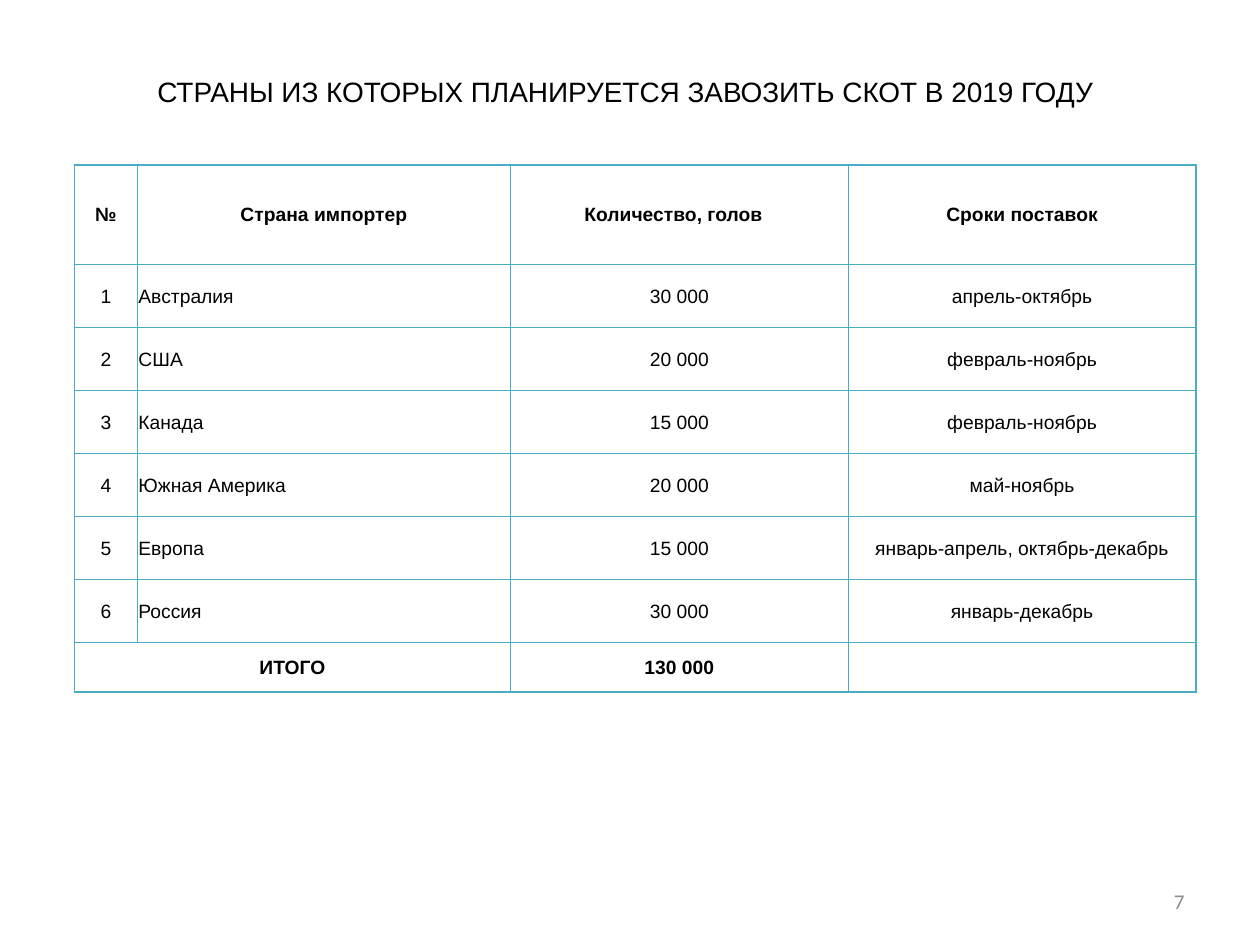
from lxml.etree import SubElement
from pptx import Presentation
from pptx.dml.color import RGBColor
from pptx.enum.text import MSO_ANCHOR as Anchor, PP_ALIGN as Align
from pptx.oxml.ns import qn
from pptx.util import Cm, Pt

BLACK = RGBColor(0x00, 0x00, 0x00)
WHITE = RGBColor(0xFF, 0xFF, 0xFF)
GREY = RGBColor(0x8C, 0x8C, 0x8C)
TEAL = RGBColor(0x4B, 0xAC, 0xC6)

HEADINGS = ["№", "Страна импортер", "Количество, голов", "Сроки поставок"]
SUPPLIES = [
    ("Австралия", "30 000", "апрель-октябрь"),
    ("США", "20 000", "февраль-ноябрь"),
    ("Канада", "15 000", "февраль-ноябрь"),
    ("Южная Америка", "20 000", "май-ноябрь"),
    ("Европа", "15 000", "январь-апрель, октябрь-декабрь"),
    ("Россия", "30 000", "январь-декабрь"),
]
TOTAL = ["ИТОГО", "", "130 000", ""]
COLUMN_WIDTHS = [1.27, 7.52, 6.81, 7.01]
ROW_HEIGHTS = [2.0] + [1.27] * len(SUPPLIES) + [1.0]


def apply(target, values):
    for name, value in values.items():
        setattr(target, name, value)


class SlideBuilder:
    font = "Arial"
    border_width = Pt(1)
    cell_format = {
        "vertical_anchor": Anchor.MIDDLE,
        "margin_left": Cm(0.02),
        "margin_top": Cm(0.02),
        "margin_right": Cm(0.02),
        "margin_bottom": Cm(0),
    }

    def __init__(self, page):
        self.page = page

    def add_text(self, frame, text, size, color=BLACK, font=None, bold=False, align=Align.CENTER):
        para = frame.paragraphs[0]
        para.alignment = align
        span = para.add_run()
        span.text = text
        apply(span.font, {"name": font or self.font, "size": Pt(size), "bold": bold})
        span.font.color.rgb = color
        return para

    def place(self, box, left, top, width, height):
        apply(box, {"left": Cm(left), "top": Cm(top), "width": Cm(width), "height": Cm(height)})

    def title(self, text, *bounds):
        box = self.page.shapes.title
        self.place(box, *bounds)
        apply(box.text_frame, {
            "word_wrap": True,
            "vertical_anchor": Anchor.MIDDLE,
            "margin_left": Cm(0.2),
            "margin_top": Cm(0.1),
            "margin_right": Cm(0.6),
            "margin_bottom": Cm(0.1),
        })
        self.add_text(box.text_frame, text, 16).line_spacing = 0.9

    def page_number(self, text, *bounds):
        box = self.page.shapes.add_textbox(*map(Cm, bounds))
        apply(box.text_frame, {"word_wrap": True, "vertical_anchor": Anchor.MIDDLE})
        self.add_text(box.text_frame, text, 12, GREY, "Calibri", align=Align.RIGHT)

    def borders(self, cell):
        properties = cell._tc.get_or_add_tcPr()
        for position, side in enumerate(("lnL", "lnR", "lnT", "lnB")):
            line = SubElement(properties, qn(f"a:{side}"), w=str(self.border_width))
            fill = SubElement(line, qn("a:solidFill"))
            SubElement(fill, qn("a:srgbClr"), val=str(TEAL))
            properties.insert(position, line)

    def cell(self, cell, text, bold, align):
        apply(cell, self.cell_format)
        cell.fill.solid()
        cell.fill.fore_color.rgb = WHITE
        self.borders(cell)
        if text:
            self.add_text(cell.text_frame, text, 11, bold=bold, align=align)

    def table(self, rows, left, top, widths, heights):
        frame = self.page.shapes.add_table(
            len(rows), len(widths), Cm(left), Cm(top), Cm(sum(widths)), Cm(sum(heights)))
        table = frame.table
        apply(table, {"first_row": False, "horz_banding": False})
        for column, width in zip(table.columns, widths):
            column.width = Cm(width)
        for row, height in zip(table.rows, heights):
            row.height = Cm(height)
        last = len(rows) - 1
        for r, values in enumerate(rows):
            strong = r in (0, last)
            for c, text in enumerate(values):
                align = Align.LEFT if c == 1 and not strong else Align.CENTER
                self.cell(table.cell(r, c), text, strong, align)
        table.cell(last, 0).merge(table.cell(last, 1))
        return table


def main():
    deck = Presentation()
    apply(deck, {"slide_width": Cm(25.4), "slide_height": Cm(19.05)})
    builder = SlideBuilder(deck.slides.add_slide(deck.slide_layouts[5]))
    builder.title("СТРАНЫ ИЗ КОТОРЫХ ПЛАНИРУЕТСЯ ЗАВОЗИТЬ СКОТ В 2019 ГОДУ", 0.71, 0.99, 24.2, 1.78)
    numbered = [(str(number), *supply) for number, supply in enumerate(SUPPLIES, 1)]
    table = builder.table([HEADINGS, *numbered, TOTAL], 1.5, 3.33, COLUMN_WIDTHS, ROW_HEIGHTS)
    table.cell(0, 2).margin_right = Cm(0.26)
    builder.page_number("7", 18.21, 17.65, 5.92, 1.02)
    deck.save("out.pptx")


if __name__ == "__main__":
    main()
